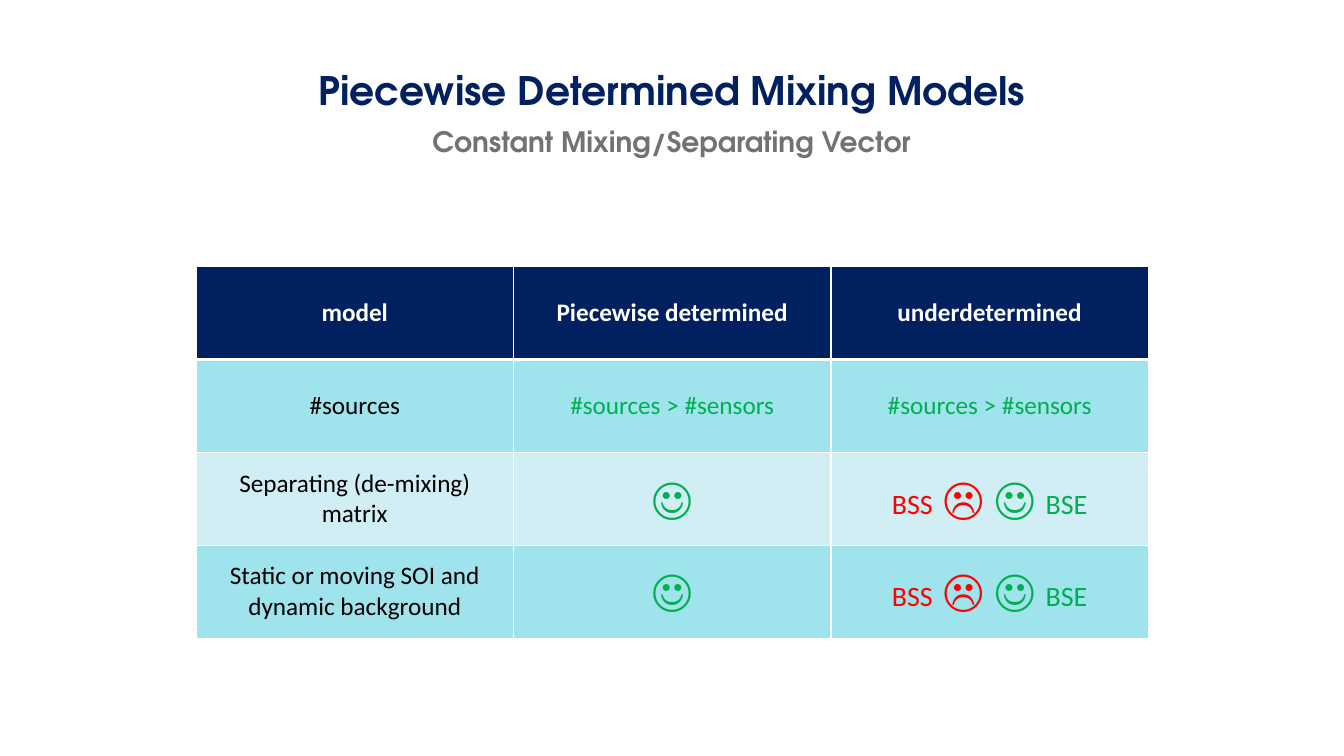
from dataclasses import dataclass

from lxml import etree
from pptx import Presentation
from pptx import util as u
from pptx.dml.color import RGBColor
from pptx.enum import text
from pptx.oxml.ns import qn


@dataclass(frozen=True)
class Theme:
    heading_font: str = "TeX Gyre Adventor"
    body_font: str = "Calibri"
    navy: str = "002060"
    gray: str = "767171"
    white: str = "FFFFFF"
    black: str = "000000"
    green: str = "00B050"
    red: str = "FF0000"
    bands: tuple = ("9FE3EC", "D1EEF4")
    title: int = 28
    subtitle: int = 20
    body: int = 18
    label: int = 20
    face: int = 32


class Deck:
    def __init__(self, theme):
        self.theme = theme
        self.prs = Presentation()
        self.prs.slide_width, self.prs.slide_height = u.Cm(33.87), u.Cm(19.05)
        self.s = self.prs.slides.add_slide(self.prs.slide_layouts[6])

    def run(self, p, words, size, color, bold=False, font=None):
        r = p.add_run()
        r.text = words
        r.font.name = font or self.theme.body_font
        r.font.size, r.font.bold = u.Pt(size), bold
        r.font.color.rgb = RGBColor.from_string(color)

    def heading(self, box, lines):
        tf = self.s.shapes.add_textbox(*map(u.Cm, box)).text_frame
        tf.word_wrap = True
        for i, (words, size, color) in enumerate(lines):
            p = tf.add_paragraph() if i else tf.paragraphs[0]
            p.alignment = text.PP_ALIGN.CENTER
            p.line_spacing, p.space_before = 0.9, u.Pt(10)
            self.run(p, words, size, color, True, self.theme.heading_font)

    def borders(self, cell, bottom):
        tcPr = cell._tc.get_or_add_tcPr()
        sides = (("lnL", 1), ("lnR", 1), ("lnT", 1), ("lnB", bottom))
        for i, (side, width) in enumerate(sides):
            ln = etree.Element(qn(f"a:{side}"), w=str(u.Pt(width)))
            fill = etree.SubElement(ln, qn("a:solidFill"))
            etree.SubElement(fill, qn("a:srgbClr"), val=self.theme.white)
            tcPr.insert(i, ln)

    def cell(self, cell, paragraphs, fill, header):
        cell.fill.solid()
        cell.fill.fore_color.rgb = RGBColor.from_string(fill)
        cell.vertical_anchor = text.MSO_ANCHOR.MIDDLE
        tf = cell.text_frame
        for i, runs in enumerate(paragraphs):
            p = tf.add_paragraph() if i else tf.paragraphs[0]
            p.alignment = text.PP_ALIGN.CENTER
            for words, size, color in runs:
                self.run(p, words, size, color, header)
        self.borders(cell, 3 if header else 1)

    def table(self, box, rows):
        t = self.theme
        left, top, width, height = map(u.Cm, box)
        table = self.s.shapes.add_table(
            len(rows), len(rows[0]), left, top, width, height).table
        for i, row in enumerate(rows):
            fill = t.bands[(i - 1) % 2] if i else t.navy
            for j, paragraphs in enumerate(row):
                self.cell(table.cell(i, j), paragraphs, fill, i == 0)


def main():
    t = Theme()
    deck = Deck(t)

    # Title and subtitle
    deck.heading((5.33, 1.68, 23.19, 3.23), [
        ("Piecewise Determined Mixing Models", t.title, t.navy),
        ("Constant Mixing/Separating Vector", t.subtitle, t.gray),
    ])

    # Cell contents: each cell is a list of paragraphs, each a list of runs
    def plain(color, *lines):
        return [[(line, t.body, color)] for line in lines]

    happy = [[("☺", t.face, t.green)]]
    mixed = [[("BSS", t.label, t.red), (" ☹ ", t.face, t.red),
              ("☺ ", t.face, t.green), ("BSE", t.label, t.green)]]
    condition = plain(t.green, "#sources > #sensors")

    # Model comparison table
    deck.table((4.94, 6.72, 24, 9.36), [
        [plain(t.white, name) for name in
         ("model", "Piecewise determined", "underdetermined")],
        [plain(t.black, "#sources"), condition, condition],
        [plain(t.black, "Separating (de-mixing)", "matrix"), happy, mixed],
        [plain(t.black, "Static or moving SOI and dynamic background"),
         happy, mixed],
    ])
    deck.prs.save("out.pptx")


if __name__ == "__main__":
    main()
